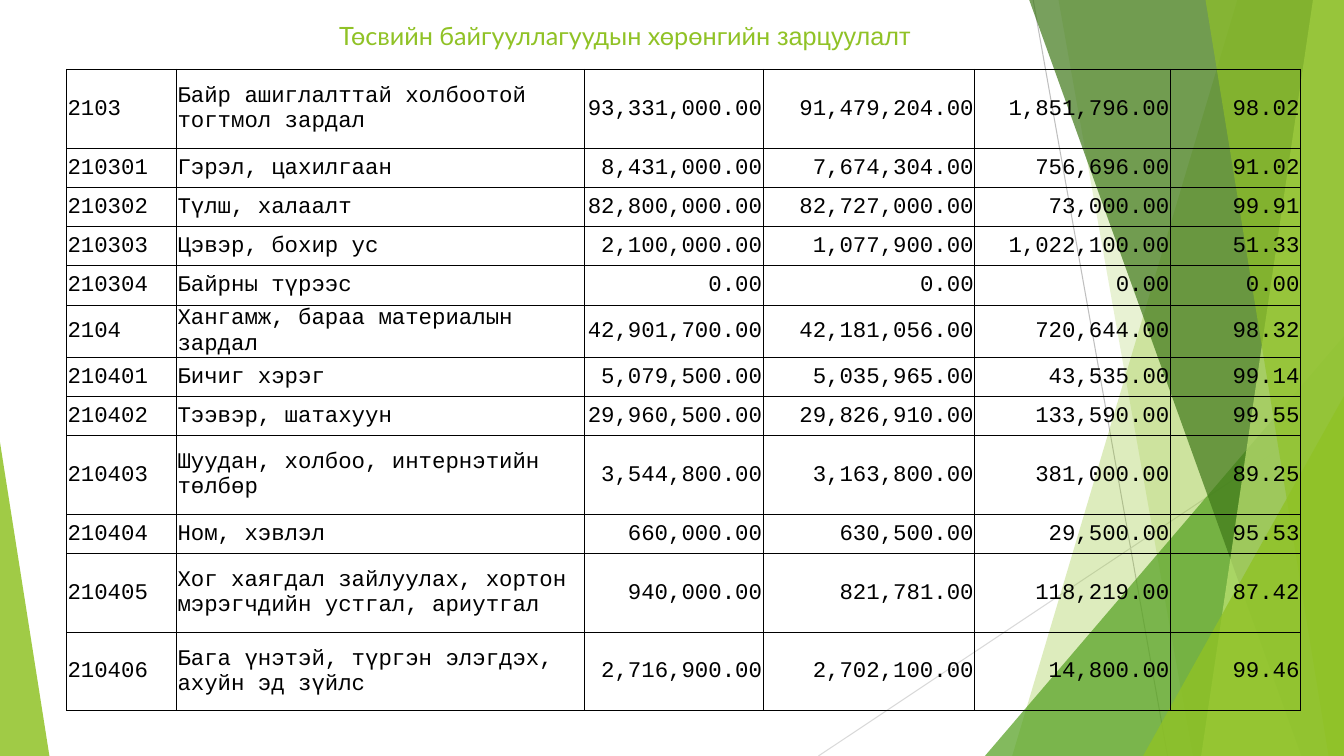
from dataclasses import dataclass

from lxml import etree
from pptx import Presentation
from pptx.dml.color import RGBColor
from pptx.enum.shapes import MSO_CONNECTOR, MSO_SHAPE
from pptx.enum.text import MSO_ANCHOR, MSO_AUTO_SIZE, PP_ALIGN
from pptx.oxml.ns import qn
from pptx.util import Pt

STRAIGHT = MSO_CONNECTOR.STRAIGHT
TRIANGLE = MSO_SHAPE.ISOSCELES_TRIANGLE
TOP, MIDDLE = MSO_ANCHOR.TOP, MSO_ANCHOR.MIDDLE
LEFT, CENTER, RIGHT = PP_ALIGN.LEFT, PP_ALIGN.CENTER, PP_ALIGN.RIGHT
NO_AUTOFIT = MSO_AUTO_SIZE.NONE

WIDTH, HEIGHT = 960, 540
FACET_TOP = -0.6


@dataclass(frozen=True)
class Theme:
    lime: str = "90C226"
    green: str = "54A021"
    forest: str = "3F7819"
    pale: str = "C0E474"
    steep_ray: str = "BFBFBF"
    flat_ray: str = "D9D9D9"
    ink: str = "000000"
    title_font: str = "Lato"
    title_end_font: str = "Arial"
    table_font: str = "Courier New"
    title_size: int = 18
    table_size: int = 16
    rule: float = 0.5
    ray: float = 0.75


THEME = Theme()

TITLE = [("Төсвийн байгууллагуудын хөрөнгийн ", THEME.title_font),
         ("зарцуулалт", THEME.title_end_font)]

COLUMN_WIDTHS = [78.6, 291, 128, 151.2, 139.8, 93]
ROW_HEIGHT = 28.08
TALL_ROWS = {"2103", "210403", "210405", "210406"}
BUDGET = [
    ("2103", "Байр ашиглалттай холбоотой тогтмол зардал",
     "93,331,000.00", "91,479,204.00", "1,851,796.00", "98.02"),
    ("210301", "Гэрэл, цахилгаан", "8,431,000.00", "7,674,304.00", "756,696.00", "91.02"),
    ("210302", "Түлш, халаалт", "82,800,000.00", "82,727,000.00", "73,000.00", "99.91"),
    ("210303", "Цэвэр, бохир ус", "2,100,000.00", "1,077,900.00", "1,022,100.00", "51.33"),
    ("210304", "Байрны түрээс", "0.00", "0.00", "0.00", "0.00"),
    ("2104", "Хангамж, бараа материалын зардал",
     "42,901,700.00", "42,181,056.00", "720,644.00", "98.32"),
    ("210401", "Бичиг хэрэг", "5,079,500.00", "5,035,965.00", "43,535.00", "99.14"),
    ("210402", "Тээвэр, шатахуун", "29,960,500.00", "29,826,910.00", "133,590.00", "99.55"),
    ("210403", "Шуудан, холбоо, интернэтийн төлбөр",
     "3,544,800.00", "3,163,800.00", "381,000.00", "89.25"),
    ("210404", "Ном, хэвлэл", "660,000.00", "630,500.00", "29,500.00", "95.53"),
    ("210405", "Хог хаягдал зайлуулах, хортон мэрэгчдийн устгал, ариутгал",
     "940,000.00", "821,781.00", "118,219.00", "87.42"),
    ("210406", "Бага үнэтэй, түргэн элэгдэх, ахуйн эд зүйлс",
     "2,716,900.00", "2,702,100.00", "14,800.00", "99.46"),
]


def add_run(paragraph, text, font, size, color):
    run = paragraph.add_run()
    run.text = text
    run.font.name = font
    run.font.size = Pt(size)
    run.font.color.rgb = RGBColor.from_string(color)


def add_ray(slide, start, end, color):
    ray = slide.shapes.add_connector(STRAIGHT, *map(Pt, start + end))
    ray.line.color.rgb = RGBColor.from_string(color)
    ray.line.width = Pt(THEME.ray)
    etree.SubElement(ray.element.spPr, qn("a:effectLst"))


def paint_facet(facet, color, opacity):
    facet.shadow.inherit = False
    facet.line.fill.background()
    facet.fill.solid()
    facet.fill.fore_color.rgb = RGBColor.from_string(color)
    tint = facet.element.spPr.find(qn("a:solidFill"))[0]
    etree.SubElement(tint, qn("a:alpha"), val=str(opacity * 1000))


def add_band(slide, top_x, bottom_x, color, opacity):
    """A band from a slanted left edge to the right side of the slide."""
    outline = slide.shapes.build_freeform(Pt(top_x), Pt(FACET_TOP))
    corners = [(WIDTH, FACET_TOP), (WIDTH, HEIGHT), (bottom_x, HEIGHT)]
    outline.add_line_segments([(Pt(x), Pt(y)) for x, y in corners], close=True)
    paint_facet(outline.convert_to_shape(), color, opacity)


def add_corner(slide, left, right, top, apex, color, opacity):
    """A right triangle standing on the bottom of the slide."""
    corner = slide.shapes.add_shape(
        TRIANGLE, Pt(left), Pt(top), Pt(right - left), Pt(HEIGHT - top))
    corner.adjustments[0] = apex
    paint_facet(corner, color, opacity)


def add_decoration(slide):
    add_ray(slide, (738, 0), (834, HEIGHT), THEME.steep_ray)
    add_ray(slide, (WIDTH, 290), (584.6, HEIGHT), THEME.flat_ray)
    add_band(slide, 884, 723, THEME.lime, 30)
    add_band(slide, 756, 852, THEME.lime, 20)
    add_corner(slide, 703.5, WIDTH, 240, 1, THEME.green, 72)
    add_band(slide, 735, 929.6, THEME.forest, 70)
    add_band(slide, 938, 858, THEME.pale, 70)
    add_band(slide, 861, 949, THEME.lime, 65)
    add_corner(slide, 816.5, WIDTH, 283, 1, THEME.lime, 80)
    add_corner(slide, 0, 35.3, 316, 0, THEME.lime, 85)


def fill_title(slide):
    title = slide.shapes.title
    title.left, title.top, title.width, title.height = map(Pt, (108, 10.8, 676.8, 26))
    frame = title.text_frame
    frame.auto_size = NO_AUTOFIT
    frame.word_wrap = True
    frame.vertical_anchor = TOP
    heading = frame.paragraphs[0]
    heading.alignment = CENTER
    for text, font in TITLE:
        add_run(heading, text, font, THEME.title_size, THEME.lime)
    # Bring the title in front of the decoration
    slide.shapes.element.append(title.element)


def rule_cell(cell):
    properties = cell._tc.get_or_add_tcPr()
    for position, side in enumerate(("a:lnL", "a:lnR", "a:lnT", "a:lnB")):
        edge = etree.Element(qn(side), w=str(Pt(THEME.rule)))
        properties.insert(position, edge)
        ink = etree.SubElement(edge, qn("a:solidFill"))
        etree.SubElement(ink, qn("a:srgbClr"), val=THEME.ink)


def fill_cell(cell, text, alignment):
    cell.fill.background()
    cell.vertical_anchor = MIDDLE
    cell.margin_left = cell.margin_right = cell.margin_top = Pt(0.75)
    cell.margin_bottom = Pt(0)
    paragraph = cell.text_frame.paragraphs[0]
    paragraph.alignment = alignment
    add_run(paragraph, text, THEME.table_font, THEME.table_size, THEME.ink)
    rule_cell(cell)


def add_budget_table(slide):
    heights = [ROW_HEIGHT * (2 if row[0] in TALL_ROWS else 1) for row in BUDGET]
    budget = slide.shapes.add_table(
        len(BUDGET), len(COLUMN_WIDTHS), Pt(47.5), Pt(49.5),
        Pt(sum(COLUMN_WIDTHS)), Pt(sum(heights))).table
    budget.first_row = budget.horz_banding = False
    for column, width in zip(budget.columns, COLUMN_WIDTHS):
        column.width = Pt(width)
    for row, height, entries in zip(budget.rows, heights, BUDGET):
        row.height = Pt(height)
        for position, (cell, text) in enumerate(zip(row.cells, entries)):
            fill_cell(cell, text, LEFT if position < 2 else RIGHT)


def main():
    deck = Presentation()
    deck.slide_width, deck.slide_height = Pt(WIDTH), Pt(HEIGHT)
    slide = deck.slides.add_slide(deck.slide_layouts.get_by_name("Title Only"))
    add_decoration(slide)
    fill_title(slide)
    add_budget_table(slide)
    deck.save("out.pptx")


if __name__ == "__main__":
    main()
